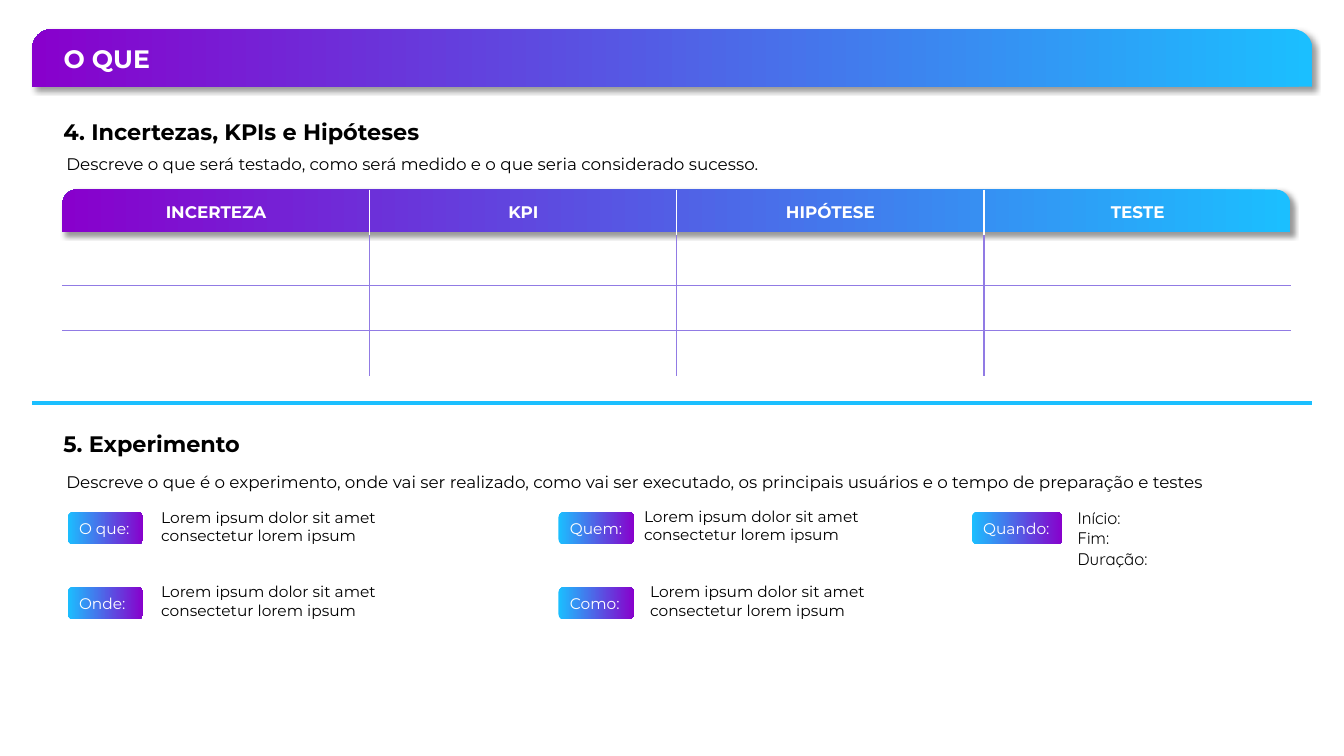
import pptx
import pptx.util
import pptx.dml.color
import pptx.enum.text
import pptx.enum.shapes
import pptx.oxml
import pptx.oxml.ns

THEME = {
    "cyan": "1BBFFF", "purple": "8800CC", "grid": "917BE4",
    "white": "FFFFFF", "black": "000000",
    "title": 18, "head": 16, "note": 12, "tag": 11,
    "font": "Montserrat", "list": "Quicksand",
}
NS = pptx.oxml.ns.nsdecls("a")
RGB = pptx.dml.color.RGBColor.from_string
ALIGN = pptx.enum.text.PP_ALIGN
ANCHOR = pptx.enum.text.MSO_ANCHOR
SHAPE = pptx.enum.shapes.MSO_SHAPE

deck = pptx.Presentation()
deck.slide_width = pptx.util.Inches(13.33)
deck.slide_height = pptx.util.Inches(7.5)
slide = deck.slides.add_slide(deck.slide_layouts[1])
shapes = slide.shapes


def area(x, y, w, h):
    """Turn percent shares of the slide into lengths."""
    wide, high = deck.slide_width / 100, deck.slide_height / 100
    return int(x * wide), int(y * high), int(w * wide), int(h * high)


def write(frame, text, size, color="black", bold=False, font="font",
          align=ALIGN.LEFT, anchor=ANCHOR.TOP):
    frame.text = text
    frame.word_wrap = True
    frame.auto_size = pptx.enum.text.MSO_AUTO_SIZE.NONE
    frame.vertical_anchor = anchor
    for para in frame.paragraphs:
        para.alignment = align
        para.space_before = pptx.util.Pt(0)
        for run in para.runs:
            run.font.size = pptx.util.Pt(THEME[size])
            run.font.name = THEME[font]
            run.font.bold = bold
            run.font.color.rgb = RGB(THEME[color])


# Gradient bars and tags: kind, area, angle, label
ROWS = (67.73, 77.65)
blocks = [
    (SHAPE.ROUND_2_SAME_RECTANGLE, (4.65, 25.07, 91.35, 5.6), 180, ""),
    (SHAPE.ROUND_2_SAME_RECTANGLE, (2.4, 3.87, 95.25, 7.6), 180, ""),
    (SHAPE.ROUNDED_RECTANGLE, (5.03, ROWS[0], 5.63, 4.27), 0, "O que:"),
    (SHAPE.ROUNDED_RECTANGLE, (5.03, ROWS[1], 5.63, 4.27), 0, "Onde:"),
    (SHAPE.ROUNDED_RECTANGLE, (41.55, ROWS[0], 5.63, 4.27), 0, "Quem:"),
    (SHAPE.ROUNDED_RECTANGLE, (41.55, ROWS[1], 5.63, 4.27), 0, "Como:"),
    (SHAPE.ROUNDED_RECTANGLE, (72.3, ROWS[0], 6.75, 4.27), 0, "Quando:"),
]
for kind, place, angle, label in blocks:
    block = shapes.add_shape(kind, *area(*place))
    block.shadow.inherit = False
    block.line.fill.background()
    block.fill.gradient()
    block.fill.gradient_angle = angle
    for stop, color in zip(block.fill.gradient_stops, ("cyan", "purple")):
        stop.color.rgb = RGB(THEME[color])
    if label:
        write(block.text_frame, label, "tag", "white", anchor=ANCHOR.MIDDLE)
    else:
        block.adjustments[0] = 0.338
        block.adjustments[1] = 0
        block._element.spPr.find(pptx.oxml.ns.qn("a:effectLst")).append(
            pptx.oxml.parse_xml(
                f'<a:outerShdw {NS} blurRad="50800" dist="38100" '
                'dir="2700000" algn="tl" rotWithShape="0">'
                f'<a:srgbClr val="{THEME["black"]}"><a:alpha val="40000"/>'
                '</a:srgbClr></a:outerShdw>'))

# Title and list placeholders, brought above the bars
title, dates = shapes.title, slide.placeholders[1]
for holder, place in ((title, (3.98, 5.07, 15.9, 5.33)),
                      (dates, (79.43, 66.53, 15, 9.47))):
    holder.left, holder.top, holder.width, holder.height = area(*place)
    shapes._spTree.append(holder._element)
write(title.text_frame, "O QUE", "title", "white", True)
write(dates.text_frame, "Início:\nFim:\nDuração:", "note", font="list")
for para in dates.text_frame.paragraphs:
    props = para._p.get_or_add_pPr()
    props.set("marL", "0")
    props.set("indent", "0")
    props.append(pptx.oxml.parse_xml(f"<a:buNone {NS}/>"))

# Section heads and notes
sections = [
    (14.93, "4. Incertezas, KPIs e Hipóteses", 19.73, 60.3,
     "Descreve o que será testado, como será medido e o que seria "
     "considerado sucesso."),
    (56.27, "5. Experimento", 61.73, 91.43,
     "Descreve o que é o experimento, onde vai ser realizado, como vai ser "
     "executado, os principais usuários e o tempo de preparação e testes"),
]
for top, head, low, wide, note in sections:
    box = shapes.add_textbox(*area(3.98, top, 28.28, 4.93))
    write(box.text_frame, head, "head", bold=True, anchor=ANCHOR.MIDDLE)
    box = shapes.add_textbox(*area(4.2, low, wide, 4))
    write(box.text_frame, note, "note")

# Answers beside the tags
for x, y in ((11.25, 66.53), (11.25, 76.4), (47.18, 66.4), (47.63, 76.4)):
    box = shapes.add_textbox(*area(x, y, 20.93, 6.27))
    write(box.text_frame,
          "Lorem ipsum dolor sit amet consectetur lorem ipsum", "tag")

# Divider
left, top, wide, _ = area(2.4, 53.33, 95.25, 0)
rule = shapes.add_connector(pptx.enum.shapes.MSO_CONNECTOR.STRAIGHT,
                            left, top, left + wide, top)
rule.line.color.rgb = RGB(THEME["cyan"])
rule.line.width = pptx.util.Pt(3)
rule._element.spPr.append(pptx.oxml.parse_xml(f"<a:effectLst {NS}/>"))

# Table with inner borders only
HEADS = ["INCERTEZA", "KPI", "HIPÓTESE", "TESTE"]
HIGH = [6, 6.67, 6, 6]
frame = shapes.add_table(len(HIGH), len(HEADS),
                         *area(4.65, 25.07, 91.43, sum(HIGH)))
table = frame.table
table.first_row = table.horz_banding = False
table._tbl.tblPr.find(pptx.oxml.ns.qn("a:tableStyleId")).text = (
    "{2D5ABB26-0587-4C30-8999-92F81FD0307C}")
for r, high in enumerate(HIGH):
    table.rows[r].height = area(0, 0, 0, high)[3]
    for c, head in enumerate(HEADS):
        cell = table.cell(r, c)
        color = THEME["grid" if r else "white"]
        sides = {"L": c > 0, "R": c < len(HEADS) - 1,
                 "T": r > 1, "B": 0 < r < len(HIGH) - 1}
        for side, shown in sides.items():
            if shown:
                cell._tc.get_or_add_tcPr().append(pptx.oxml.parse_xml(
                    f'<a:ln{side} {NS} w="12700"><a:solidFill>'
                    f'<a:srgbClr val="{color}"/></a:solidFill></a:ln{side}>'))
        cell.fill.background()
        if r == 0:
            write(cell.text_frame, head, "note", "white", True,
                  align=ALIGN.CENTER)
            cell.vertical_anchor = ANCHOR.MIDDLE

deck.save("out.pptx")
